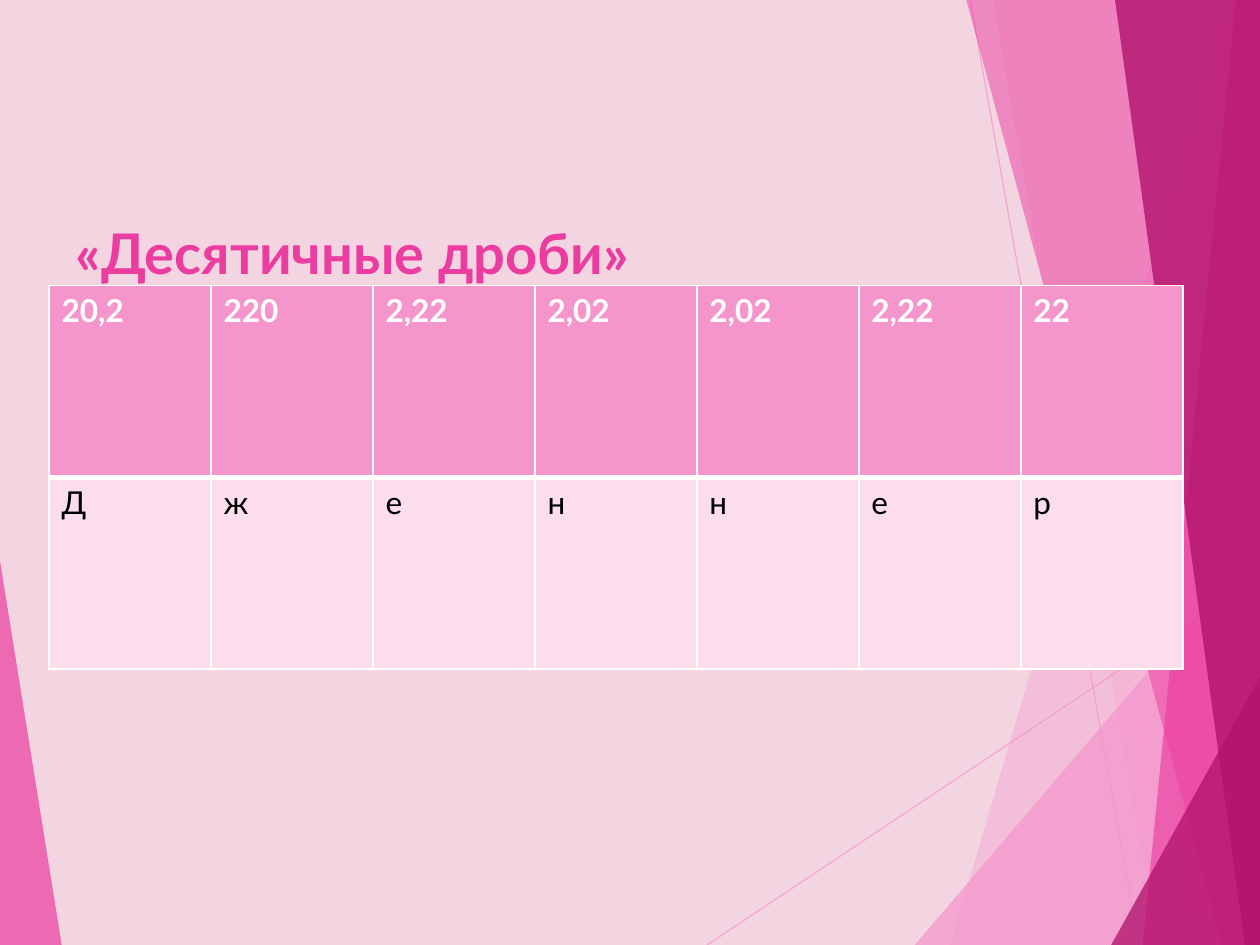
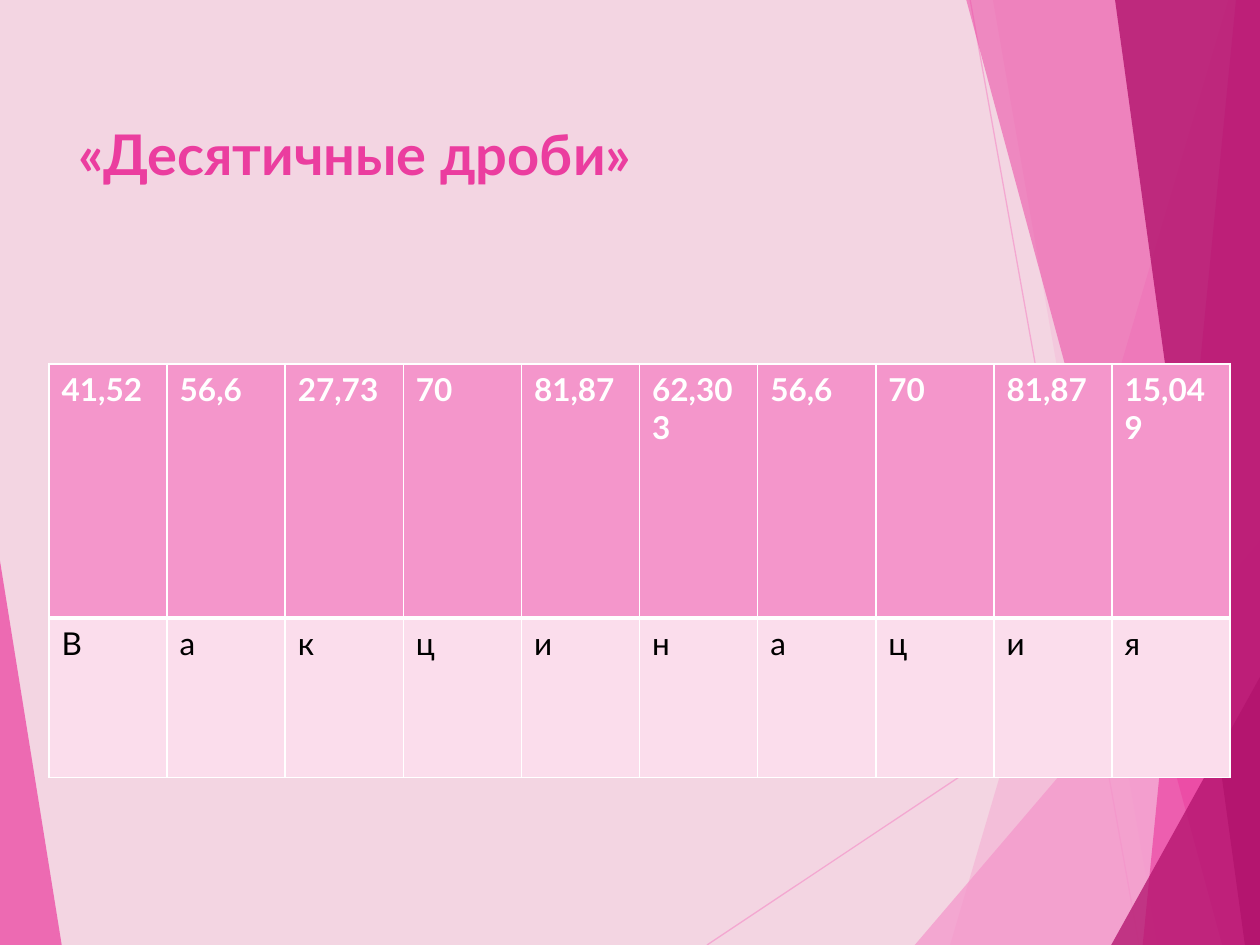
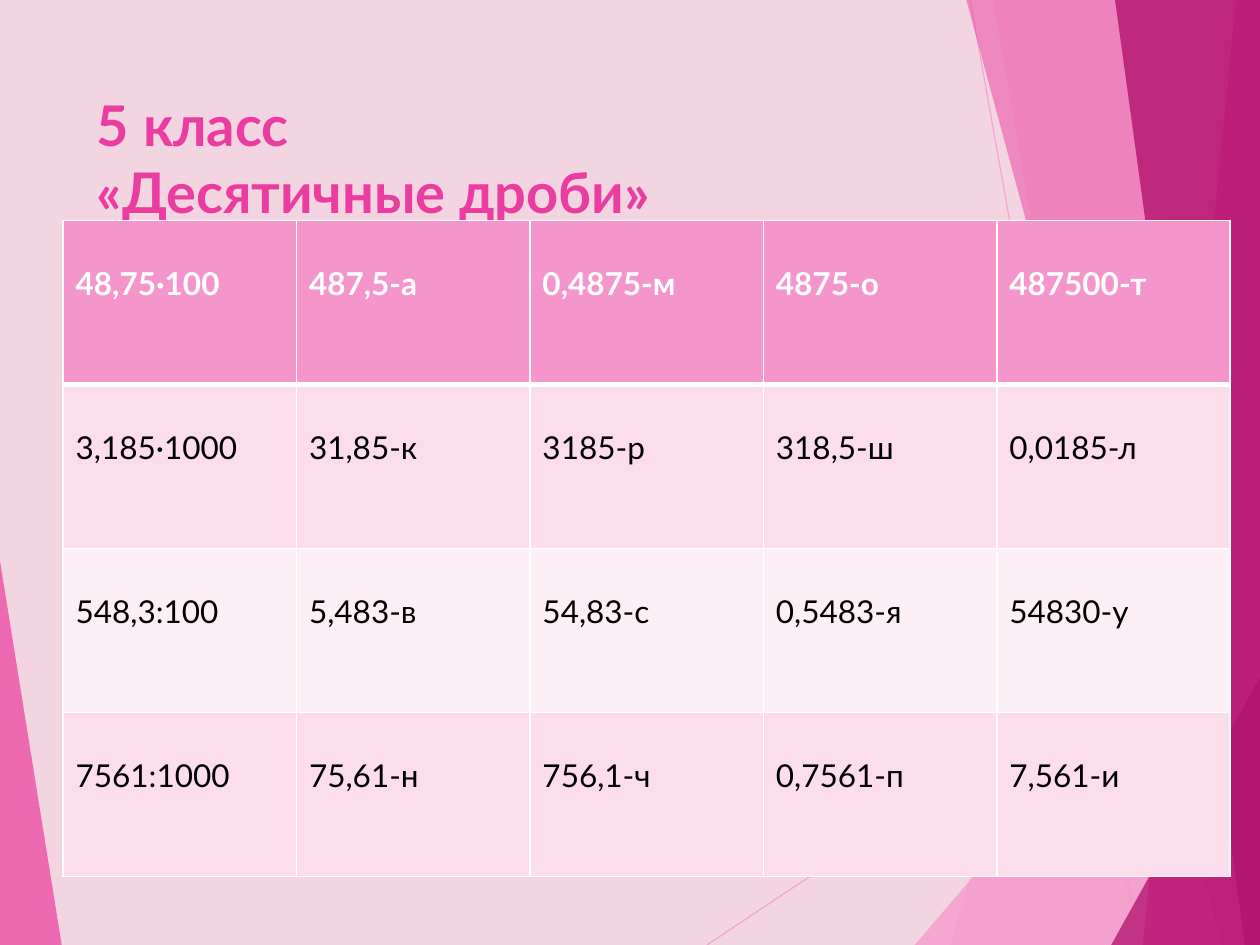
"""Builds three slides with decimal fraction tables on a shared pink design."""
from lxml import etree
from pptx import Presentation
from pptx.dml.color import RGBColor
from pptx.enum.shapes import MSO_CONNECTOR
from pptx.enum.text import MSO_ANCHOR, MSO_AUTO_SIZE, PP_ALIGN
from pptx.oxml.ns import qn
from pptx.util import Pt

LINE = MSO_CONNECTOR.STRAIGHT
TOP = MSO_ANCHOR.TOP
LEFT = PP_ALIGN.LEFT
FIXED = MSO_AUTO_SIZE.NONE

FONT = "Lato"
HEX = {
    "back": "F3D5E2",
    "pink": "F496CB",
    "rose": "EB3D9F",
    "wine": "B2136D",
    "pale": "FBDDEC",
    "mist": "FDEFF6",
    "white": "FFFFFF",
    "black": "000000",
}

RAYS = [(404, 540, 720.7, 329), (554.4, 0, 650.9, 540)]
SHARDS = [
    ("pink", 36, [(702, 0), (542.9, 540), (721, 540), (721, 0)]),
    ("pink", 20, [(567.4, 0), (661.7, 540), (720.7, 540), (720.7, 0)]),
    ("pink", 72, [(522.7, 540), (720, 309), (720.7, 540)]),
    ("rose", 50, [(552.2, 0), (698.4, 540), (720.7, 540), (720.7, 0)]),
    ("rose", 66, [(706.3, 0), (653, 540), (720.7, 540), (720, 0)]),
    ("wine", 80, [(637.2, 0), (711.4, 540), (721, 540), (720, 0)]),
    ("wine", 76, [(635, 540), (721, 385.2), (721, 540)]),
    ("rose", 70, [(-0.7, 316), (35.3, 540), (-0.7, 540)]),
]


def rgb(name):
    return RGBColor.from_string(HEX[name])


def fade(shape, share):
    color = shape.element.xpath("./p:spPr//a:srgbClr")[0]
    etree.SubElement(color, qn("a:alpha"), val=str(share * 1000))


def add_ray(slide, ends):
    ray = slide.shapes.add_connector(LINE, *map(Pt, ends))
    ray.line.color.rgb = rgb("pink")
    ray.line.width = Pt(0.75)
    fade(ray, 70)
    etree.SubElement(ray.element.spPr, qn("a:effectLst"))
    return ray


def add_shard(slide, color, share, points):
    spots = [(Pt(x), Pt(y)) for x, y in points]
    pen = slide.shapes.build_freeform(*spots[0])
    pen.add_line_segments(spots[1:], close=True)
    shard = pen.convert_to_shape()
    shard.shadow.inherit = False
    shard.fill.solid()
    shard.fill.fore_color.rgb = rgb(color)
    shard.line.fill.background()
    fade(shard, share)
    return shard


def dress(layout, slide):
    fill = layout.background.fill
    fill.solid()
    fill.fore_color.rgb = rgb("back")
    parts = [add_ray(slide, ends) for ends in RAYS]
    parts += [add_shard(slide, *shard) for shard in SHARDS]
    for n, part in enumerate(parts):
        part.element.xpath(".//p:cNvPr")[0].set("id", str(100 + n))
        layout.shapes.element.insert(2 + n, part.element)


def set_title(slide, text, box, inset=3.6):
    title = slide.shapes.title
    title.left, title.top, title.width, title.height = map(Pt, box)
    frame = title.text_frame
    frame.text = text
    frame.word_wrap = True
    frame.auto_size = FIXED
    frame.vertical_anchor = TOP
    frame.margin_top = Pt(inset)
    para = frame.paragraphs[0]
    para.alignment = LEFT
    font = para.font
    font.name, font.size, font.bold = FONT, Pt(32), True
    font.color.rgb = rgb("rose")


def set_edge(cell, side, width):
    props = cell._tc.get_or_add_tcPr()
    edge = etree.SubElement(props, qn("a:ln" + side), w=str(Pt(width)))
    fill = etree.SubElement(edge, qn("a:solidFill"))
    etree.SubElement(fill, qn("a:srgbClr"), val=HEX["white"])


def set_cell(cell, text, row, inset):
    head = row == 0
    for side in "LRTB":
        thick = (side, row) in (("B", 0), ("T", 1))
        set_edge(cell, side, 3 if thick else 1)
    cell.fill.solid()
    cell.fill.fore_color.rgb = rgb("pink" if head else "pale" if row % 2 else "mist")
    cell.margin_top = Pt(inset)
    cell.text = text
    font = cell.text_frame.paragraphs[0].font
    font.name, font.size, font.bold = FONT, Pt(18), head
    font.color.rgb = rgb("white" if head else "black")


def add_grid(slide, rows, place, highs, inset=3.6):
    left, top, width = place
    cells = [row.split() for row in rows]
    count = len(cells[0])
    size = map(Pt, (left, top, width, sum(highs)))
    table = slide.shapes.add_table(len(rows), count, *size).table
    table.first_row = table.horz_banding = False
    for col in table.columns:
        col.width = Pt(width / count)
    for r, high in enumerate(highs):
        table.rows[r].height = Pt(high)
        for c, text in enumerate(cells[r]):
            set_cell(table.cell(r, c), text, r, inset)


def main():
    deck = Presentation()
    deck.slide_width, deck.slide_height = Pt(720), Pt(540)
    layout = deck.slide_layouts[5]
    name, code, quiz = [deck.slides.add_slide(layout) for _ in range(3)]
    dress(layout, name)

    set_title(name, "«Десятичные дроби»", (36, 44.6, 648, 126), 80.4)
    add_grid(name, ["20,2 220 2,22 2,02 2,02 2,22 22", "Д ж е н н е р"],
             (28, 163.2, 648), [109.6, 109.6])

    set_title(code, "«Десятичные дроби»", (37.4, 26, 648, 96.5), 42)
    add_grid(code, ["41,52 56,6 27,73 70 81,87 62,303 56,6 70 81,87 15,049",
                    "В а к ц и н а ц и я"],
             (28, 208, 675), [145.2, 91])

    set_title(quiz, "5 класс\v«Десятичные дроби»", (48.2, 48.2, 500, 103.7))
    add_grid(quiz, ["48,75·100 487,5-а 0,4875-м 4875-о 487500-т",
                    "3,185·1000 31,85-к 3185-р 318,5-ш 0,0185-л",
                    "548,3:100 5,483-в 54,83-с 0,5483-я 54830-у",
                    "7561:1000 75,61-н 756,1-ч 0,7561-п 7,561-и"],
             (36, 126, 667), [93.7] * 4, 25.2)

    deck.save("out.pptx")


if __name__ == "__main__":
    main()
